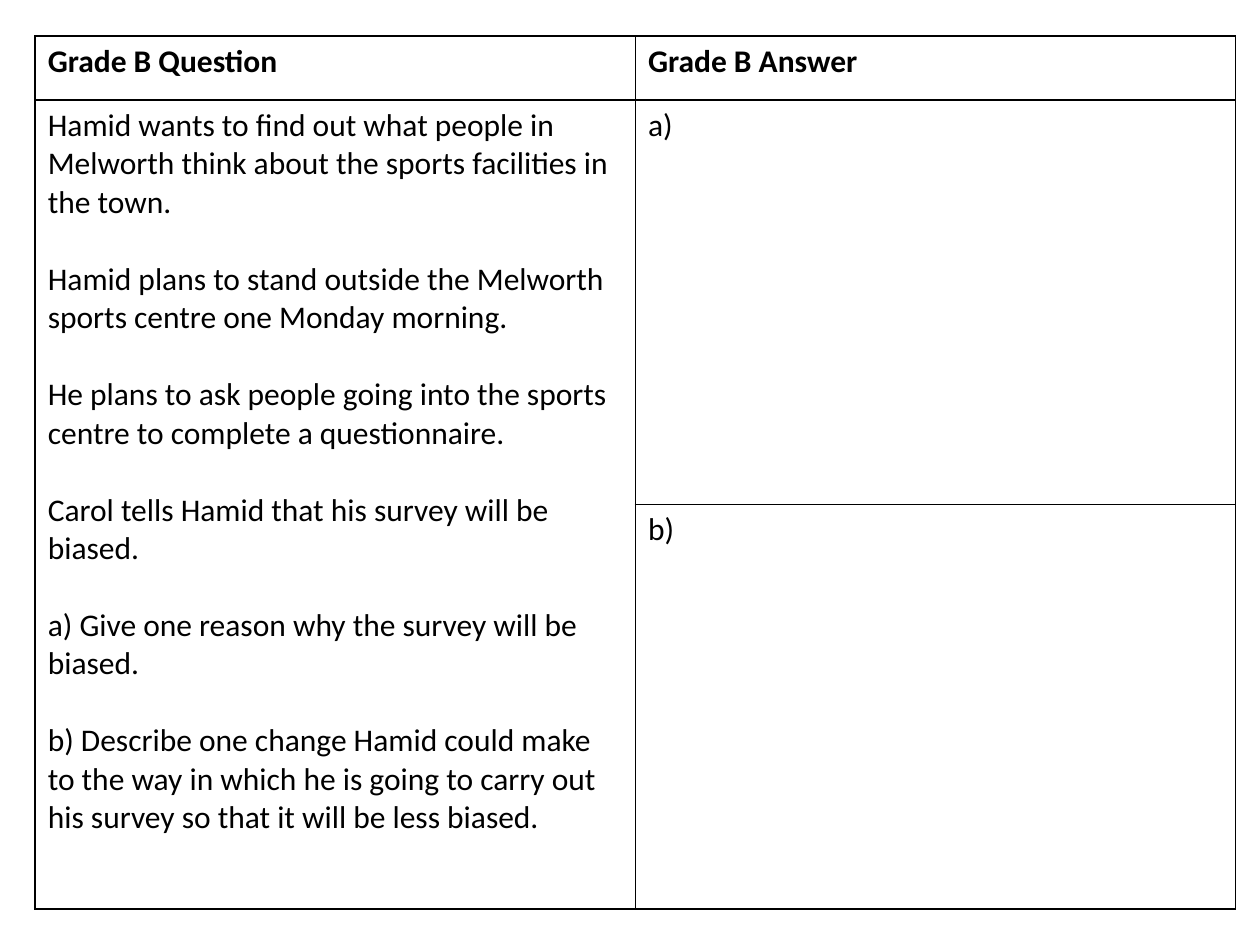
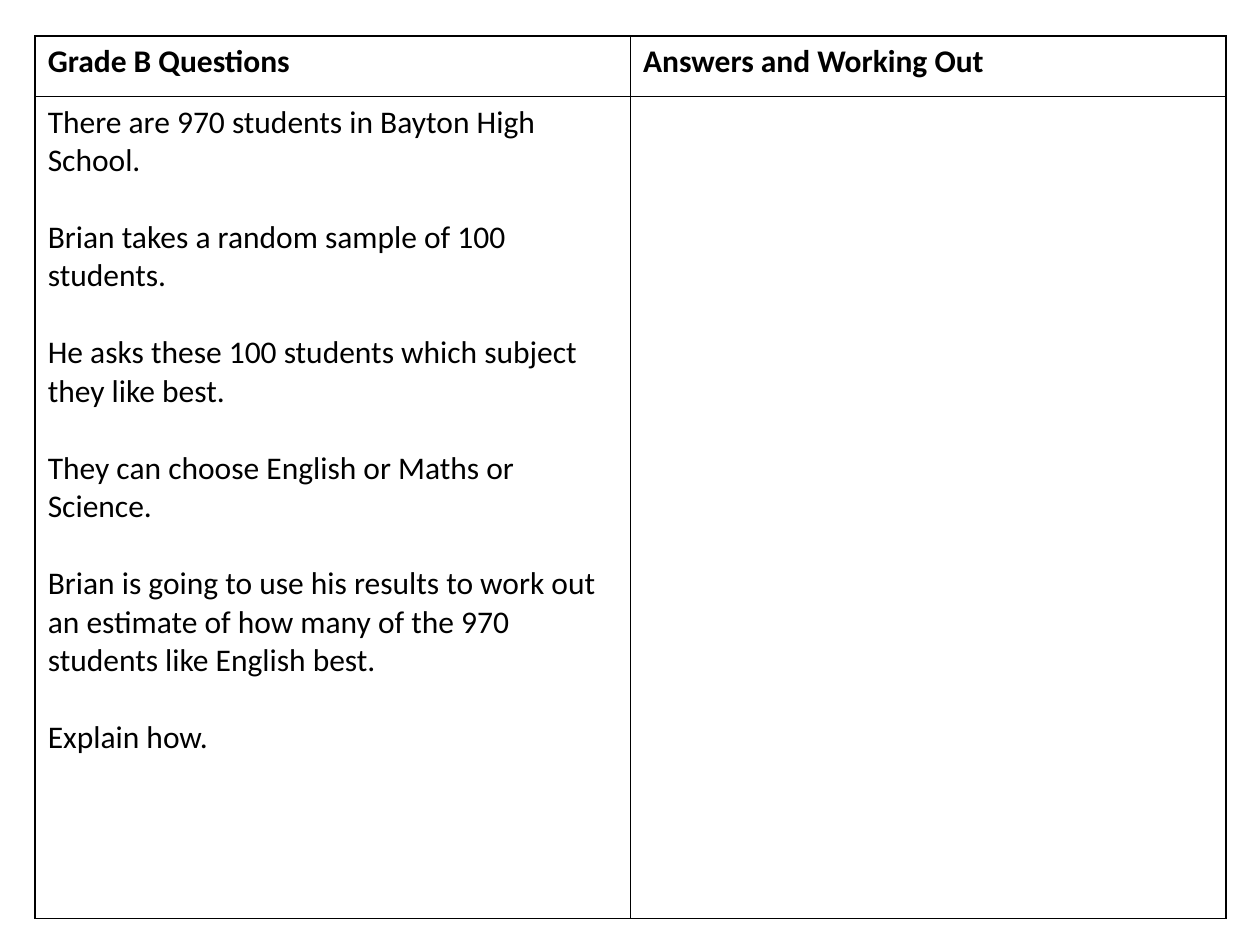
from lxml.etree import SubElement
from pptx import Presentation
from pptx.dml.color import RGBColor
from pptx.oxml.ns import qn
from pptx.util import Cm, Pt


def color(hex_string):
    return RGBColor.from_string(hex_string)


class Worksheet:
    """Holds the shared style and the current slide."""

    FONT = "Calibri"
    SIZE = Pt(18)
    PARAGRAPH_GAP = Pt(22)
    INK = "000000"
    BORDER = Pt(1)
    LEFT, TOP = Cm(0.71), Cm(0.73)

    def __init__(self):
        self.presentation = Presentation()
        self.presentation.slide_width = Cm(25.4)
        self.presentation.slide_height = Cm(19.05)
        self.slide = None

    def add_slide(self):
        blank_layout = self.presentation.slide_layouts[6]
        self.slide = self.presentation.slides.add_slide(blank_layout)

    def add_table(self, column_width, row_heights, rows):
        """Draw a two-column grid; each cell is a list of paragraphs."""
        frame = self.slide.shapes.add_table(
            len(rows), 2, self.LEFT, self.TOP, column_width * 2, sum(row_heights))
        table = frame.table
        table.first_row = table.horz_banding = False
        for column in table.columns:
            column.width = column_width
        for row_index, (height, texts) in enumerate(zip(row_heights, rows)):
            table.rows[row_index].height = height
            for column_index, paragraphs in enumerate(texts):
                cell = table.cell(row_index, column_index)
                self.fill_cell(cell, paragraphs, bold=row_index == 0)
        return table

    def fill_cell(self, cell, paragraphs, bold):
        cell.fill.background()
        self.add_borders(cell)
        cell.text = "\n".join(paragraphs)
        for paragraph in cell.text_frame.paragraphs:
            font = paragraph.font
            font.name, font.size, font.bold = self.FONT, self.SIZE, bold
            font.color.rgb = color(self.INK)
        for paragraph in cell.text_frame.paragraphs[:-1]:
            paragraph.space_after = self.PARAGRAPH_GAP

    def add_borders(self, cell):
        properties = cell._tc.get_or_add_tcPr()
        for position, side in enumerate(("lnL", "lnR", "lnT", "lnB")):
            line = SubElement(properties, qn(f"a:{side}"), w=str(self.BORDER))
            fill = SubElement(line, qn("a:solidFill"))
            SubElement(fill, qn("a:srgbClr"), val=self.INK)
            properties.insert(position, line)  # borders come before the fill


def build_bias_slide(sheet):
    sheet.add_slide()
    question = [
        "Hamid wants to find out what people in Melworth think about the sports facilities in the town.",
        "Hamid plans to stand outside the Melworth sports centre one Monday morning.",
        "He plans to ask people going into the sports centre to complete a questionnaire.",
        "Carol tells Hamid that his survey will be biased.",
        "a) Give one reason why the survey will be biased.",
        "b) Describe one change Hamid could make to the way in which he is going to carry out "
        "his survey so that it will be less biased.",
    ]
    table = sheet.add_table(Cm(12.1), [Cm(1.29), Cm(8.15), Cm(8.15)], [
        (["Grade B Question"], ["Grade B Answer"]),
        (question, ["a)"]),
        ([], ["b)"]),
    ])
    # The question runs beside both answer boxes
    table.cell(1, 0).merge(table.cell(2, 0))


def build_sample_slide(sheet):
    sheet.add_slide()
    question = [
        "There are 970 students in Bayton High School.",
        "Brian takes a random sample of 100 students.",
        "He asks these 100 students which subject they like best.",
        "They can choose English or Maths or Science.",
        "Brian is going to use his results to work out an estimate of how many of the 970 "
        "students like English best.",
        "Explain how.",
    ]
    sheet.add_table(Cm(12), [Cm(1.22), Cm(16.57)], [
        (["Grade B Questions"], ["Answers and Working Out"]),
        (question, []),
    ])


def main():
    sheet = Worksheet()
    build_bias_slide(sheet)
    build_sample_slide(sheet)
    sheet.presentation.save("out.pptx")


if __name__ == "__main__":
    main()
